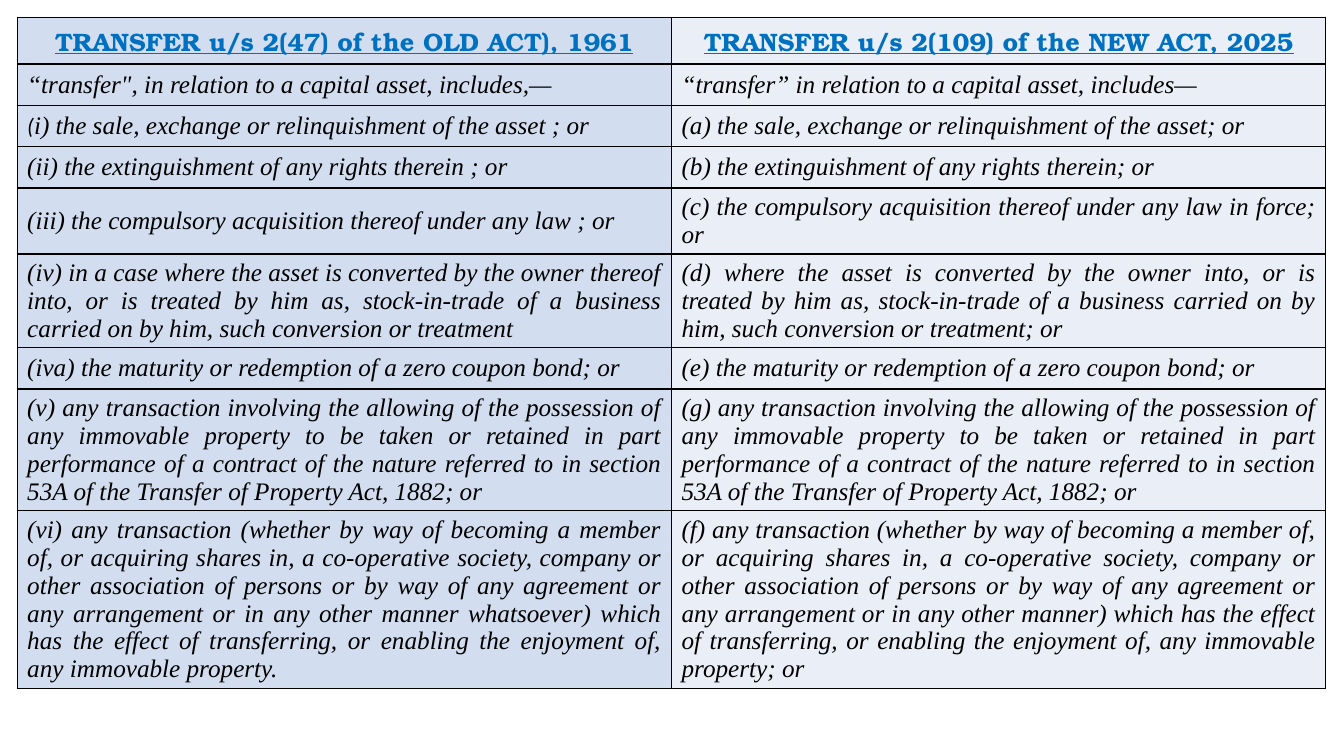
from lxml import etree
from pptx import Presentation
from pptx.dml.color import RGBColor
from pptx.enum.text import MSO_ANCHOR as ANCHOR, PP_ALIGN as ALIGN
from pptx.oxml.ns import qn
from pptx.util import Inches, Pt

BLACK = RGBColor(0x00, 0x00, 0x00)
HEADING_BLUE = RGBColor(0x00, 0x70, 0xC0)
OLD_ACT_FILL = RGBColor(0xD2, 0xDE, 0xEF)
NEW_ACT_FILL = RGBColor(0xEA, 0xEF, 0xF7)
COLUMN_FILLS = (OLD_ACT_FILL, NEW_ACT_FILL)

HEADINGS = (
    "TRANSFER u/s 2(47) of the OLD ACT), 1961",
    "TRANSFER u/s 2(109) of the NEW ACT, 2025",
)
CLAUSES = (
    ("“transfer\", in relation to a capital asset, includes,—",
     "“transfer” in relation to a capital asset, includes—"),
    ("(i) the sale, exchange or relinquishment of the asset ; or",
     "(a) the sale, exchange or relinquishment of the asset; or"),
    ("(ii) the extinguishment of any rights therein ; or",
     "(b) the extinguishment of any rights therein; or"),
    ("(iii) the compulsory acquisition thereof under any law ; or",
     "(c) the compulsory acquisition thereof under any law in force; or"),
    ("(iv) in a case where the asset is converted by the owner thereof into, "
     "or is treated by him as, stock-in-trade of a business carried on by him, "
     "such conversion or treatment",
     "(d) where the asset is converted by the owner into, or is treated by him as, "
     "stock-in-trade of a business carried on by him, such conversion or treatment; or"),
    ("(iva) the maturity or redemption of a zero coupon bond; or",
     "(e) the maturity or redemption of a zero coupon bond; or"),
    ("(v) any transaction involving the allowing of the possession of any immovable "
     "property to be taken or retained in part performance of a contract of the nature "
     "referred to in section 53A of the Transfer of Property Act, 1882; or",
     "(g) any transaction involving the allowing of the possession of any immovable "
     "property to be taken or retained in part performance of a contract of the nature "
     "referred to in section 53A of the Transfer of Property Act, 1882; or"),
    ("(vi) any transaction (whether by way of becoming a member of, or acquiring shares "
     "in, a co-operative society, company or other association of persons or by way of "
     "any agreement or any arrangement or in any other manner whatsoever) which has the "
     "effect of transferring, or enabling the enjoyment of, any immovable property.",
     "(f) any transaction (whether by way of becoming a member of, or acquiring shares "
     "in, a co-operative society, company or other association of persons or by way of "
     "any agreement or any arrangement or in any other manner) which has the effect of "
     "transferring, or enabling the enjoyment of, any immovable property; or"),
)


def set_borders(cell, color=BLACK, width=Pt(1)):
    """Rule all four sides; the lines must precede the fill in tcPr."""
    tc_pr = cell._tc.get_or_add_tcPr()
    for i, side in enumerate(("lnL", "lnR", "lnT", "lnB")):
        ln = etree.Element(qn(f"a:{side}"), w=str(int(width)))
        fill = etree.SubElement(ln, qn("a:solidFill"))
        etree.SubElement(fill, qn("a:srgbClr"), val=str(color))
        tc_pr.insert(i, ln)


def style_cell(cell, fill):
    cell.fill.solid()
    cell.fill.fore_color.rgb = fill
    set_borders(cell)


def set_font(font, name, color, bold=False, italic=False, underline=False):
    font.name, font.size = name, Pt(18)
    font.color.rgb = color
    font.bold, font.italic, font.underline = bold, italic, underline


def write_heading(cell, text):
    p = cell.text_frame.paragraphs[0]
    p.text, p.alignment = text, ALIGN.CENTER
    set_font(p.runs[0].font, "TeX Gyre Bonum", HEADING_BLUE, bold=True, underline=True)


def write_clause(cell, text):
    cell.vertical_anchor = ANCHOR.MIDDLE
    p = cell.text_frame.paragraphs[0]
    p.alignment = ALIGN.JUSTIFY
    parts = ("(", text[1:]) if text.startswith("(i)") else (text,)
    for part in parts:
        r = p.add_run()
        r.text = part
        set_font(r.font, "Times New Roman", BLACK, italic=True)
    if len(parts) > 1:
        bracket = p.runs[0].font
        bracket.name, bracket.size = "Calibri", Pt(16)


def add_comparison_table(slide):
    frame = slide.shapes.add_table(len(CLAUSES) + 1, 2, Inches(0.17), Inches(0.17),
                                   Inches(12.98), Inches(6.93))
    table = frame.table
    table.horz_banding = False
    for row in table.rows:
        row.height = Inches(0.41)
    frame.height = Inches(6.93)
    for i, texts in enumerate((HEADINGS, *CLAUSES)):
        write = write_clause if i else write_heading
        for j, (text, fill) in enumerate(zip(texts, COLUMN_FILLS)):
            cell = table.cell(i, j)
            style_cell(cell, fill)
            write(cell, text)


def main():
    prs = Presentation()
    prs.slide_width, prs.slide_height = Inches(13.33), Inches(7.5)
    slide = prs.slides.add_slide(prs.slide_layouts[6])
    add_comparison_table(slide)
    prs.save("out.pptx")


if __name__ == "__main__":
    main()
